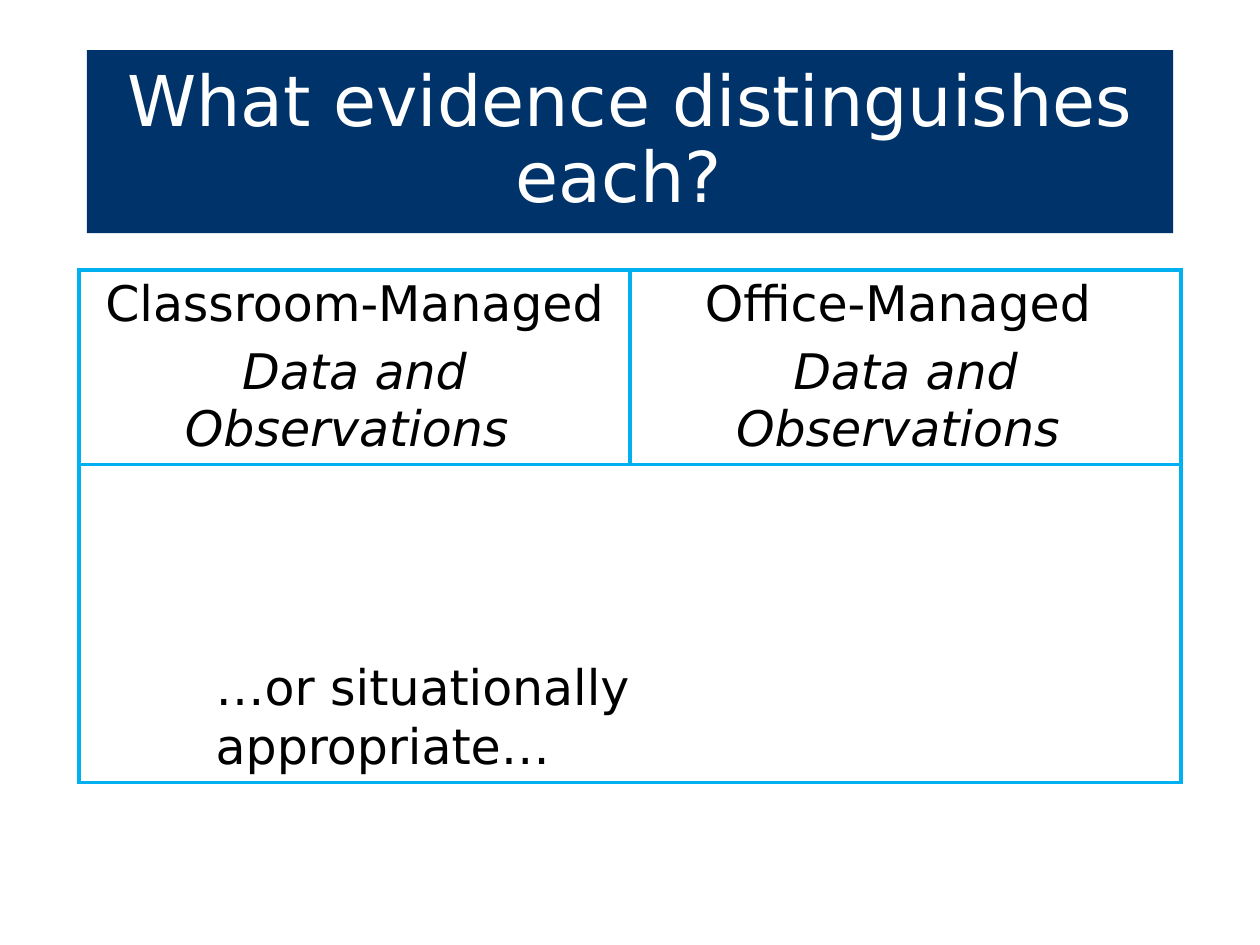
from lxml import etree
from pptx import Presentation
from pptx.dml.color import RGBColor
from pptx.enum.shapes import MSO_SHAPE
from pptx.enum.text import MSO_ANCHOR, PP_ALIGN
from pptx.oxml.ns import qn
from pptx.util import Cm, Pt

RECT = MSO_SHAPE.RECTANGLE
MIDDLE = MSO_ANCHOR.MIDDLE
LEFT, CENTER = PP_ALIGN.LEFT, PP_ALIGN.CENTER

NAVY = RGBColor(0x00, 0x33, 0x69)
SKY = RGBColor(0x00, 0xB0, 0xF0)
BLACK = RGBColor(0x00, 0x00, 0x00)
WHITE = RGBColor(0xFF, 0xFF, 0xFF)
FONT = "DejaVu Sans"

TITLE = "What evidence distinguishes each? "
HEADS = ["Classroom-Managed", "Office-Managed "]
SUB = "Data and Observations "
NOTE = "…or situationally appropriate…"

TITLE_BOX = (1.75, 1.01, 21.9, 3.69)
NOTE_BOX = (4.1, 13.11, 15.62, 1.02)
GRID_LEFT, GRID_TOP = 1.59, 5.44
COL_WIDTH = 11.11
ROWS = [3.92, 6.42]


def write(para, text, size=28, color=BLACK, align=CENTER, italic=False):
    para.alignment = align
    run = para.add_run()
    run.text = text
    font = run.font
    font.name, font.size, font.italic = FONT, Pt(size), italic
    font.color.rgb = color


def border(cell):
    props = cell._tc.get_or_add_tcPr()
    for side in ("lnL", "lnR", "lnT", "lnB"):
        line = etree.SubElement(props, qn("a:" + side), w=str(Pt(2.25)))
        fill = etree.SubElement(line, qn("a:solidFill"))
        etree.SubElement(fill, qn("a:srgbClr"), val=str(SKY))


def add_grid(slide):
    count = len(HEADS)
    frame = slide.shapes.add_table(
        len(ROWS), count, Cm(GRID_LEFT), Cm(GRID_TOP),
        Cm(COL_WIDTH * count), Cm(sum(ROWS)))
    table = frame.table
    table.first_row = table.horz_banding = False
    for row, height in zip(table.rows, ROWS):
        row.height = Cm(height)
    for cell in table.iter_cells():
        border(cell)
        cell.fill.solid()
        cell.fill.fore_color.rgb = WHITE
        cell.vertical_anchor = MIDDLE
    for col, head in enumerate(HEADS):
        text = table.cell(0, col).text_frame
        write(text.paragraphs[0], head)
        para = text.add_paragraph()
        para.space_before = Pt(6)
        write(para, SUB, italic=True)
    table.cell(1, 0).merge(table.cell(1, count - 1))


def add_note(slide):
    text = slide.shapes.add_textbox(*map(Cm, NOTE_BOX)).text_frame
    text.word_wrap = True
    write(text.paragraphs[0], NOTE, align=LEFT)


def add_title(slide):
    shape = slide.shapes.add_shape(RECT, *map(Cm, TITLE_BOX))
    shape.shadow.inherit = False
    shape.fill.solid()
    shape.fill.fore_color.rgb = NAVY
    shape.line.fill.background()
    text = shape.text_frame
    text.word_wrap = True
    text.vertical_anchor = MIDDLE
    para = text.paragraphs[0]
    para.line_spacing = 0.9
    write(para, TITLE, size=40, color=WHITE)


def main():
    deck = Presentation()
    deck.slide_width, deck.slide_height = Cm(25.4), Cm(19.05)
    slide = deck.slides.add_slide(deck.slide_layouts[6])
    add_grid(slide)
    add_note(slide)
    add_title(slide)
    deck.save("out.pptx")


if __name__ == "__main__":
    main()
